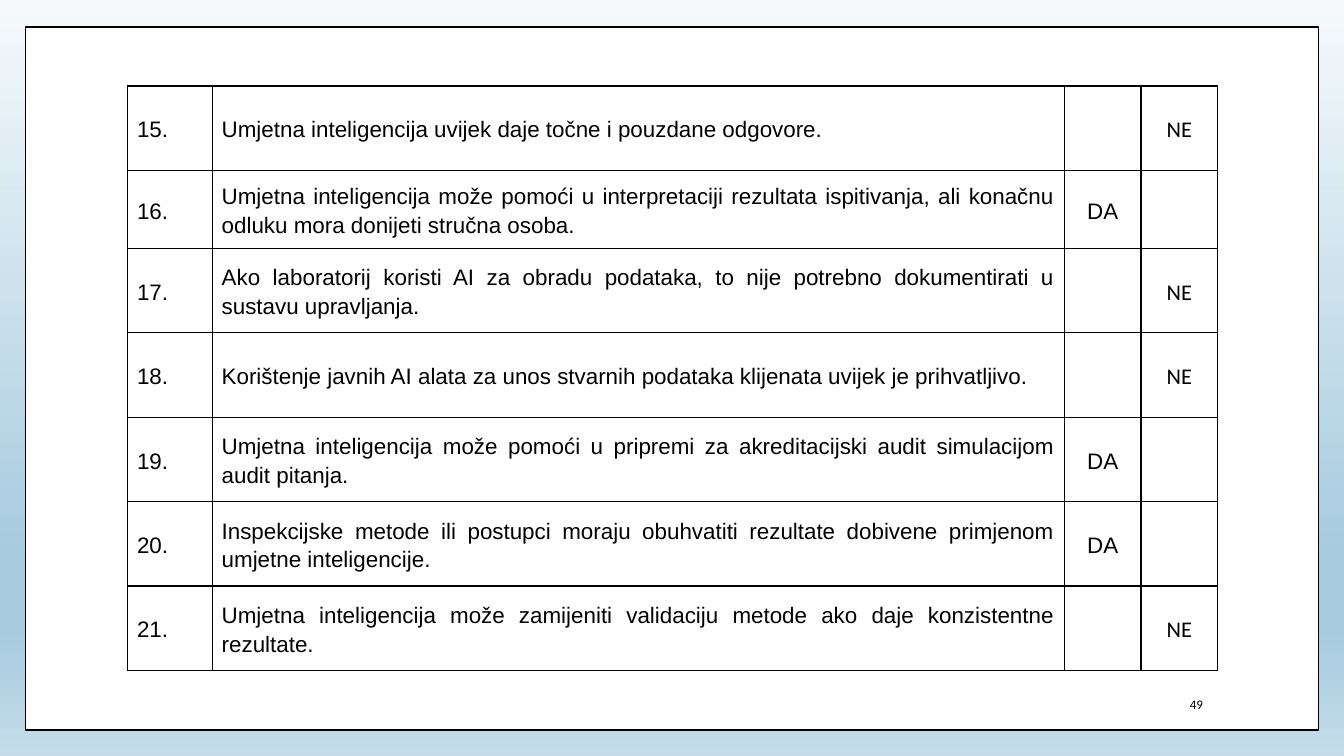
import pptx
import pptx.util
import pptx.dml.color
import pptx.enum.shapes
import pptx.enum.text
import pptx.oxml
import pptx.oxml.ns

Inches, Pt = pptx.util.Inches, pptx.util.Pt
ALIGN = pptx.enum.text.PP_ALIGN
MIDDLE = pptx.enum.text.MSO_ANCHOR.MIDDLE

WIDTH = 10
HEIGHT = WIDTH * 9 / 16
BLACK, WHITE = "000000", "FFFFFF"
GRADIENT = [(0, "F5F9FB"), (74, "A7CBDF"), (83, "A7CBDF"), (100, "C4DCEA")]
PAGE_NUMBER = "49"
FIRST_NUMBER = 15
STATEMENTS = [
    ("Umjetna inteligencija uvijek daje točne i pouzdane odgovore.", "NE"),
    ("Umjetna inteligencija može pomoći u interpretaciji rezultata ispitivanja, "
     "ali konačnu odluku mora donijeti stručna osoba.", "DA"),
    ("Ako laboratorij koristi AI za obradu podataka, to nije potrebno "
     "dokumentirati u sustavu upravljanja.", "NE"),
    ("Korištenje javnih AI alata za unos stvarnih podataka klijenata uvijek je "
     "prihvatljivo.", "NE"),
    ("Umjetna inteligencija može pomoći u pripremi za akreditacijski audit "
     "simulacijom audit pitanja.", "DA"),
    ("Inspekcijske metode ili postupci moraju obuhvatiti rezultate dobivene "
     "primjenom umjetne inteligencije.", "DA"),
    ("Umjetna inteligencija može zamijeniti validaciju metode ako daje "
     "konzistentne rezultate.", "NE"),
]
COLUMNS = [0.63, 6.34, 0.57, 0.57]
ALIGNMENTS = [ALIGN.LEFT, ALIGN.JUSTIFY, ALIGN.CENTER, ALIGN.CENTER]
FONTS = ["Arial", "Arial", "Arial", "Calibri"]
TABLE_HEIGHT, LOW_ROW_HEIGHT, LOW_ROW = 4.35, 0.58, 1
ROW_HEIGHT = (TABLE_HEIGHT - LOW_ROW_HEIGHT) / (len(STATEMENTS) - 1)


def color(value):
    return pptx.dml.color.RGBColor.from_string(value)


def write(frame, text, font="Arial", size=12, align=ALIGN.LEFT, spacing=1.15, after=3):
    paragraph = frame.paragraphs[0]
    paragraph.alignment = align
    paragraph.line_spacing = spacing
    paragraph.space_after = Pt(after)
    run = paragraph.add_run()
    run.text = text
    run.font.name = font
    run.font.size = Pt(size)
    run.font.color.rgb = color(BLACK)


def set_background(slide):
    fill = slide.background.fill
    fill.gradient()
    fill.gradient_angle = 270
    stops = next(slide.element.iter(pptx.oxml.ns.qn("a:gsLst")))
    for stop in list(stops):
        stops.remove(stop)
    for position, value in GRADIENT:
        stops.append(pptx.oxml.parse_xml(
            f'<a:gs {pptx.oxml.ns.nsdecls("a")} pos="{position * 1000}">'
            f'<a:srgbClr val="{value}"/></a:gs>'))


def add_panel(slide):
    left, top = 0.19, 0.2
    panel = slide.shapes.add_shape(
        pptx.enum.shapes.MSO_SHAPE.RECTANGLE, Inches(left), Inches(top),
        Inches(WIDTH - 2 * left), Inches(5.23))
    panel.shadow.inherit = False
    panel.fill.solid()
    panel.fill.fore_color.rgb = color(WHITE)
    panel.line.color.rgb = color(BLACK)
    panel.line.width = Pt(1)


def format_cell(cell):
    properties = cell._tc.get_or_add_tcPr()
    for side in "LRTB":
        properties.append(pptx.oxml.parse_xml(
            f'<a:ln{side} {pptx.oxml.ns.nsdecls("a")} w="{Pt(0.75)}">'
            f'<a:solidFill><a:srgbClr val="{BLACK}"/></a:solidFill></a:ln{side}>'))
    cell.fill.background()
    cell.vertical_anchor = MIDDLE
    cell.margin_left = cell.margin_right = Inches(0.07)
    cell.margin_top = cell.margin_bottom = 0


def add_statements(slide):
    heights = [LOW_ROW_HEIGHT if row == LOW_ROW else ROW_HEIGHT
               for row in range(len(STATEMENTS))]
    table = slide.shapes.add_table(
        len(STATEMENTS), len(COLUMNS), Inches(0.95), Inches(0.64),
        Inches(sum(COLUMNS)), Inches(TABLE_HEIGHT)).table
    table.first_row = table.horz_banding = False
    for column, width in zip(table.columns, COLUMNS):
        column.width = Inches(width)
    for index, (statement, answer) in enumerate(STATEMENTS):
        table.rows[index].height = Inches(heights[index])
        texts = [f"{FIRST_NUMBER + index}.", statement,
                 answer if answer == "DA" else "", answer if answer == "NE" else ""]
        for cell, text, align, font in zip(table.rows[index].cells, texts, ALIGNMENTS, FONTS):
            format_cell(cell)
            if text:
                write(cell.text_frame, text, font=font, align=align)


def add_page_number(slide):
    frame = slide.shapes.add_textbox(
        Inches(7.65), Inches(5.1), Inches(1.4), Inches(0.3)).text_frame
    frame.word_wrap = True
    frame.vertical_anchor = MIDDLE
    write(frame, PAGE_NUMBER, font="Calibri", size=7, align=ALIGN.RIGHT, spacing=0.9, after=6)


def main():
    presentation = pptx.Presentation()
    presentation.slide_width = Inches(WIDTH)
    presentation.slide_height = Inches(HEIGHT)
    slide = presentation.slides.add_slide(presentation.slide_layouts[6])
    set_background(slide)
    add_panel(slide)
    add_page_number(slide)
    add_statements(slide)
    presentation.save("out.pptx")


if __name__ == "__main__":
    main()
